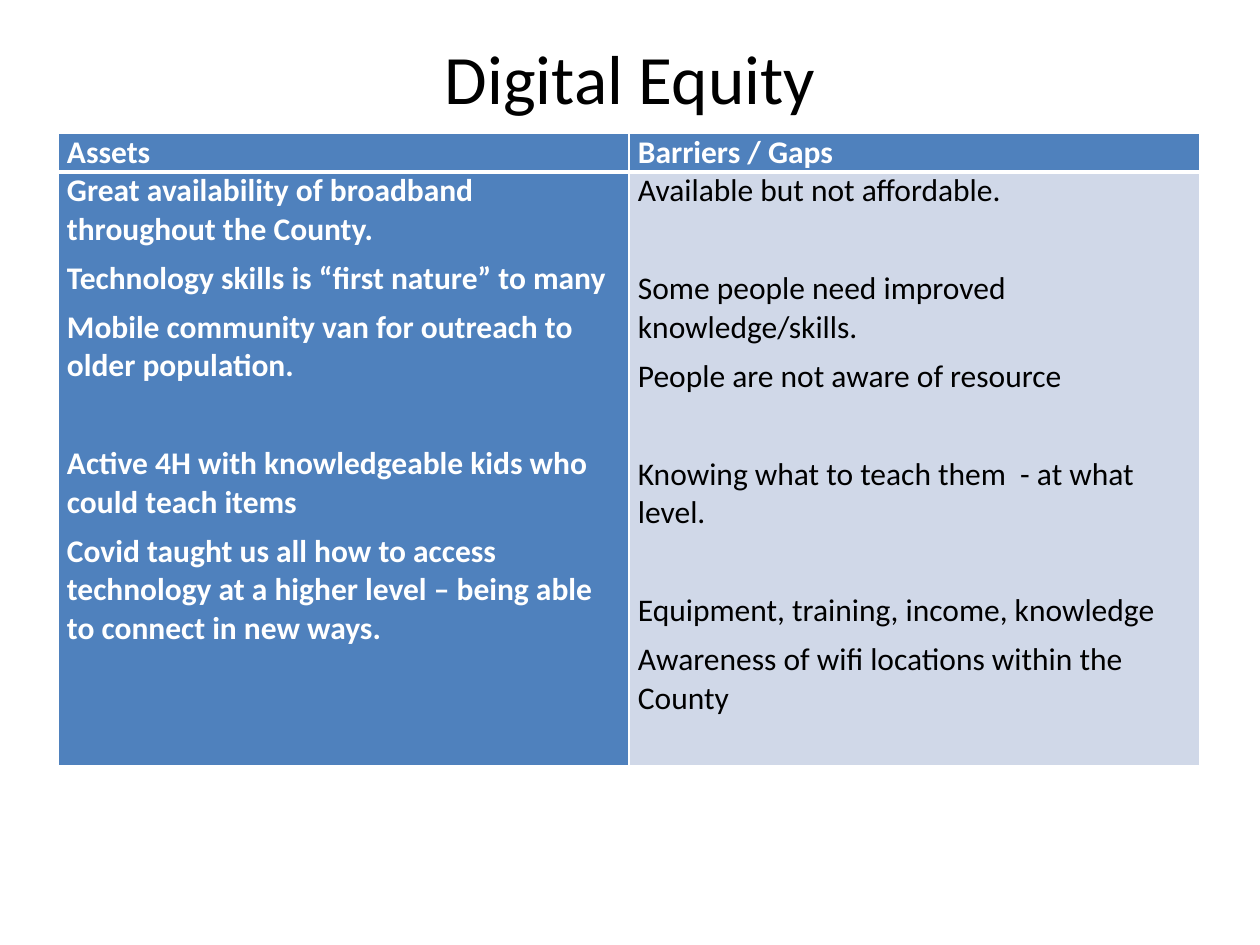
"""Build the Digital Equity slide with its table of assets and barriers."""
from dataclasses import dataclass

from lxml import etree
from pptx import Presentation
from pptx.dml.color import RGBColor
from pptx.enum.text import MSO_ANCHOR, PP_ALIGN
from pptx.oxml.ns import qn
from pptx.util import Emu, Pt

MIDDLE = MSO_ANCHOR.MIDDLE
CENTER = PP_ALIGN.CENTER
SCALE = 914400 // 126


def px(count):
    return Emu(count * SCALE)


@dataclass(frozen=True)
class Theme:
    face: str = "Calibri"
    ink: str = "000000"
    white: str = "FFFFFF"
    blue: str = "4F81BD"
    pale: str = "D0D8E8"
    title: float = 39.6
    body: float = 18
    after: int = 6
    skip: int = 34
    thin: int = 1
    thick: int = 3


class Deck:
    def __init__(self, theme):
        self.theme = theme
        self.show = Presentation()
        self.show.slide_width, self.show.slide_height = px(1260), px(945)
        self.slide = self.show.slides.add_slide(self.show.slide_layouts[6])

    def style(self, font, size, color, bold=False):
        for key, value in {"name": self.theme.face, "size": Pt(size), "bold": bold}.items():
            setattr(font, key, value)
        font.color.rgb = RGBColor.from_string(color)

    def title(self, text, left, top, width, height):
        box = self.slide.shapes.add_textbox(px(left), px(top), px(width), px(height))
        frame = box.text_frame
        look = {"word_wrap": True, "vertical_anchor": MIDDLE, "margin_top": 0, "margin_bottom": 0}
        for key, value in look.items():
            setattr(frame, key, value)
        para = frame.paragraphs[0]
        para.text, para.alignment = text, CENTER
        self.style(para.font, self.theme.title, self.theme.ink)

    def edge(self, cell, side, width):
        line = etree.SubElement(cell._tc.get_or_add_tcPr(), qn(f"a:ln{side}"), w=str(Pt(width)))
        fill = etree.SubElement(line, qn("a:solidFill"))
        etree.SubElement(fill, qn("a:srgbClr"), val=self.theme.white)

    def cell(self, cell, items, fill, color, bold, edges):
        for side, width in edges.items():
            self.edge(cell, side, width)
        cell.fill.solid()
        cell.fill.fore_color.rgb = RGBColor.from_string(fill)
        pads = {"margin_left": px(9), "margin_right": px(9), "margin_top": 0, "margin_bottom": 0}
        for key, value in pads.items():
            setattr(cell, key, value)
        frame = cell.text_frame
        for spot, (text, after) in enumerate(items):
            para = frame.add_paragraph() if spot else frame.paragraphs[0]
            para.text, para.space_after = text, Pt(after)
            self.style(para.font, self.theme.body, color, bold)

    def table(self, left, top, width, heads, lists, heights):
        look = self.theme
        grid = self.slide.shapes.add_table(
            2, len(heads), px(left), px(top), px(width), px(sum(heights))).table
        for key in ("first_row", "horz_banding"):
            setattr(grid, key, False)
        for row, height in zip(grid.rows, heights):
            row.height = px(height)
        sides = dict.fromkeys("LRTB", look.thin)
        tones = ((look.blue, look.white, True), (look.pale, look.ink, False))
        for col, (head, items, tone) in enumerate(zip(heads, lists, tones)):
            self.cell(grid.cell(0, col), [(head, 0)], look.blue, look.white, True,
                      {**sides, "B": look.thick})
            self.cell(grid.cell(1, col), items, *tone, {**sides, "T": look.thick})

    def save(self):
        self.show.save("out.pptx")


def main():
    theme = Theme()
    near, far = theme.after, theme.skip
    assets = [
        ("Great availability of broadband throughout the County.", near),
        ("Technology skills is “first nature” to many", near),
        ("Mobile community van for outreach to older population.", far),
        ("Active 4H with knowledgeable kids who could teach items", near),
        ("Covid taught us all how to access technology at a higher level – "
         "being able to connect in new ways.", near),
    ]
    gaps = [
        ("Available but not affordable.", far),
        ("Some people need improved knowledge/skills.", near),
        ("People are not aware of resource", far),
        ("Knowing what to teach them  - at what level.", far),
        ("Equipment, training, income, knowledge", near),
        ("Awareness of wifi locations within the County", near),
    ]
    deck = Deck(theme)
    deck.title("Digital Equity", 63, 38, 1134, 78)
    deck.table(58, 133, 1142, ("Assets", "Barriers / Gaps"), (assets, gaps), (39, 594))
    deck.save()


if __name__ == "__main__":
    main()
